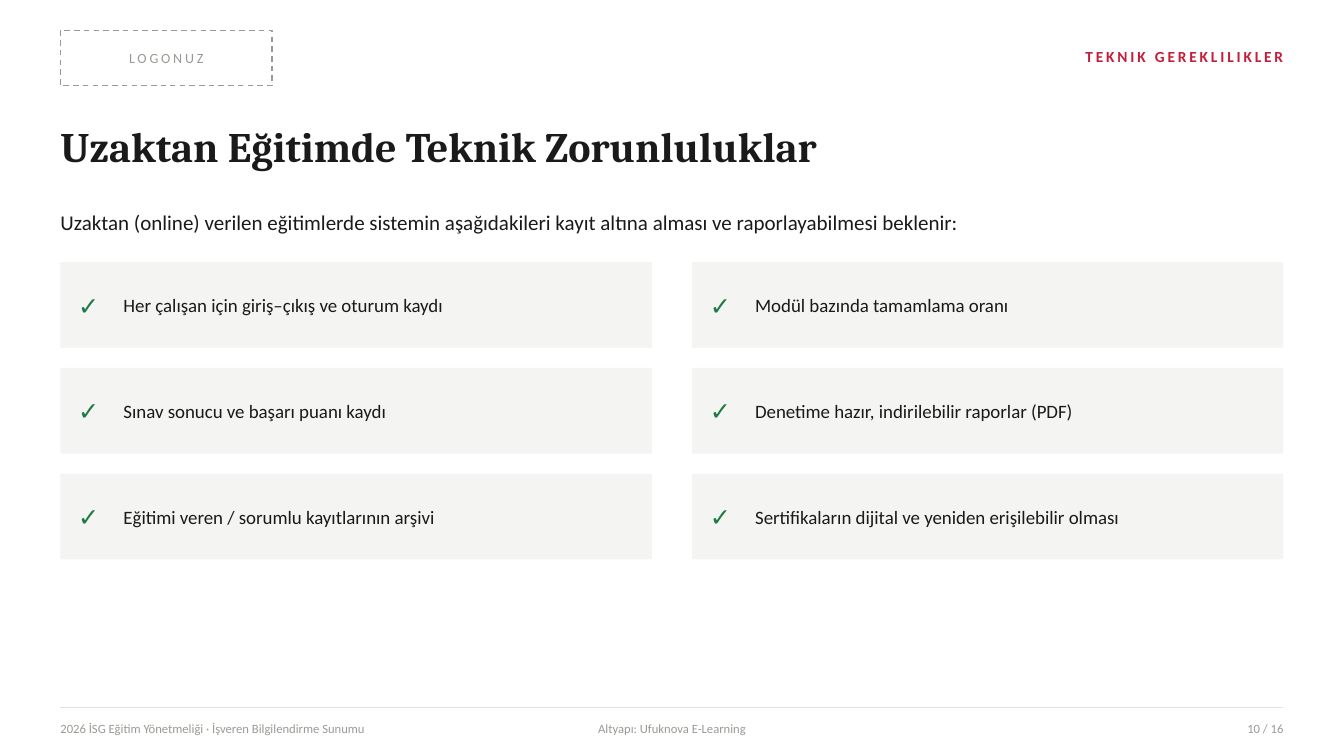
from dataclasses import dataclass

from pptx import Presentation
from pptx import util as u
from pptx.dml.color import RGBColor
from pptx.enum import dml, shapes, text
from pptx.oxml import ns, xmlchemy
from pptx.slide import Slide
from pptx.text.text import TextFrame

Pt = u.Pt
Align = text.PP_ALIGN


@dataclass(frozen=True)
class Style:
    size: float
    color: str
    font: str = "Calibri"
    bold: bool = False
    spacing: float = 0


@dataclass(frozen=True)
class Theme:
    paper: str = "FFFFFF"
    card: str = "F4F4F2"
    rule: str = "E2E2DC"
    muted: str = "9A9A95"
    title: Style = Style(30, "1A1A1A", "Cambria", bold=True)
    intro: Style = Style(15, "1A1A1A")
    item: Style = Style(13.5, "1A1A1A")
    check: Style = Style(18, "1E7A46", bold=True)
    section: Style = Style(11, "C41E3A", bold=True, spacing=2)
    logo: Style = Style(10, "9A9A95", spacing=2)
    footer: Style = Style(9, "9A9A95")


@dataclass(frozen=True)
class Box:
    left: float
    top: float
    width: float
    height: float

    def lengths(self) -> tuple[u.Length, ...]:
        return Pt(self.left), Pt(self.top), Pt(self.width), Pt(self.height)


@dataclass(frozen=True)
class Label:
    words: str
    box: Box
    style: Style
    align: Align = Align.LEFT


THEME = Theme()
SLIDE_WIDTH, SLIDE_HEIGHT = 960, 540
MARGIN = 43.2
CONTENT_WIDTH = SLIDE_WIDTH - 2 * MARGIN
RIGHT = SLIDE_WIDTH - MARGIN

COLUMNS = 2
CARD_TOP, CARD_HEIGHT = 187.2, 61.2
COLUMN_GAP, ROW_GAP = 28.8, 14.4
CARD_WIDTH = (CONTENT_WIDTH - COLUMN_GAP * (COLUMNS - 1)) / COLUMNS
CHECK_INSET, ITEM_INSET = 12.6, 45

TITLE = Label("Uzaktan Eğitimde Teknik Zorunluluklar",
              Box(MARGIN, 75.6, CONTENT_WIDTH, 57.6), THEME.title)
INTRO = Label("Uzaktan (online) verilen eğitimlerde sistemin aşağıdakileri kayıt altına "
              "alması ve raporlayabilmesi beklenir:",
              Box(MARGIN, 140.4, CONTENT_WIDTH, 36), THEME.intro)
LOGO = Label("LOGONUZ", Box(MARGIN, 21.6, 151.2, 39.6), THEME.logo, Align.CENTER)
FRAME_LABELS = [
    Label("TEKNIK GEREKLILIKLER", Box(RIGHT - 360, 25.92, 360, 28.8),
          THEME.section, Align.RIGHT),
    Label("2026 İSG Eğitim Yönetmeliği · İşveren Bilgilendirme Sunumu",
          Box(MARGIN, 509.76, 432, 21.6), THEME.footer),
    Label("Altyapı: Ufuknova E-Learning",
          Box((SLIDE_WIDTH - 288) / 2, 509.76, 288, 21.6), THEME.footer, Align.CENTER),
    Label("10 / 16", Box(RIGHT - 144, 509.76, 144, 21.6), THEME.footer, Align.RIGHT),
]
REQUIREMENTS = [
    "Her çalışan için giriş–çıkış ve oturum kaydı",
    "Modül bazında tamamlama oranı",
    "Sınav sonucu ve başarı puanı kaydı",
    "Denetime hazır, indirilebilir raporlar (PDF)",
    "Eğitimi veren / sorumlu kayıtlarının arşivi",
    "Sertifikaların dijital ve yeniden erişilebilir olması",
]


def rgb(color: str) -> RGBColor:
    return RGBColor.from_string(color)


def write(frame: TextFrame, label: Label) -> None:
    frame.word_wrap = True
    frame.auto_size = text.MSO_AUTO_SIZE.NONE
    frame.vertical_anchor = text.MSO_ANCHOR.MIDDLE
    frame.margin_left = frame.margin_right = frame.margin_top = frame.margin_bottom = 0
    paragraph = frame.paragraphs[0]
    paragraph.alignment = label.align
    run = paragraph.add_run()
    run.text = label.words
    font, style = run.font, label.style
    font.name, font.size, font.bold = style.font, Pt(style.size), style.bold
    font.color.rgb = rgb(style.color)
    if style.spacing:
        run._r.get_or_add_rPr().set("spc", str(round(style.spacing * 100)))


def add_label(slide: Slide, label: Label) -> None:
    write(slide.shapes.add_textbox(*label.box.lengths()).text_frame, label)


def fill_placeholder(slide: Slide, index: int, label: Label) -> None:
    holder = slide.placeholders[index]
    holder.left, holder.top, holder.width, holder.height = label.box.lengths()
    write(holder.text_frame, label)


def remove_bullet(frame: TextFrame) -> None:
    paragraph = frame.paragraphs[0]
    properties = paragraph._p.get_or_add_pPr()
    properties.set("marL", "0")
    properties.set("indent", "0")
    properties.append(xmlchemy.OxmlElement("a:buNone"))
    paragraph.space_before = Pt(0)


def add_panel(slide: Slide, box: Box, fill: str):
    panel = slide.shapes.add_shape(shapes.MSO_SHAPE.RECTANGLE, *box.lengths())
    panel.shadow.inherit = False
    panel.fill.solid()
    panel.fill.fore_color.rgb = rgb(fill)
    panel.line.fill.background()
    return panel


def add_logo_area(slide: Slide) -> None:
    area = add_panel(slide, LOGO.box, THEME.paper)
    area.line.color.rgb = rgb(THEME.muted)
    area.line.width = Pt(1)
    area.line.dash_style = dml.MSO_LINE.DASH
    write(area.text_frame, LOGO)


def add_footer_rule(slide: Slide) -> None:
    y = Pt(505.44)
    rule = slide.shapes.add_connector(
        shapes.MSO_CONNECTOR.STRAIGHT, Pt(MARGIN), y, Pt(RIGHT), y)
    rule.line.color.rgb = rgb(THEME.rule)
    rule.line.width = Pt(0.75)
    rule._element.find(ns.qn("p:spPr")).append(xmlchemy.OxmlElement("a:effectLst"))


def add_requirement(slide: Slide, position: int, words: str) -> None:
    row, column = divmod(position, COLUMNS)
    left = MARGIN + column * (CARD_WIDTH + COLUMN_GAP)
    top = CARD_TOP + row * (CARD_HEIGHT + ROW_GAP)
    add_panel(slide, Box(left, top, CARD_WIDTH, CARD_HEIGHT), THEME.card)
    add_label(slide, Label("✓", Box(left + CHECK_INSET, top, 28.8, CARD_HEIGHT),
                           THEME.check))
    item_width = CARD_WIDTH - ITEM_INSET - CHECK_INSET
    add_label(slide, Label(words, Box(left + ITEM_INSET, top, item_width, CARD_HEIGHT),
                           THEME.item))


def main() -> None:
    deck = Presentation()
    deck.slide_width, deck.slide_height = Pt(SLIDE_WIDTH), Pt(SLIDE_HEIGHT)
    slide = deck.slides.add_slide(deck.slide_layouts.get_by_name("Title and Content"))
    slide.background.fill.solid()
    slide.background.fill.fore_color.rgb = rgb(THEME.paper)

    fill_placeholder(slide, 0, TITLE)
    remove_bullet(slide.placeholders[1].text_frame)
    fill_placeholder(slide, 1, INTRO)
    add_logo_area(slide)
    add_footer_rule(slide)
    for label in FRAME_LABELS:
        add_label(slide, label)
    for position, words in enumerate(REQUIREMENTS):
        add_requirement(slide, position, words)

    deck.save("out.pptx")


if __name__ == "__main__":
    main()
